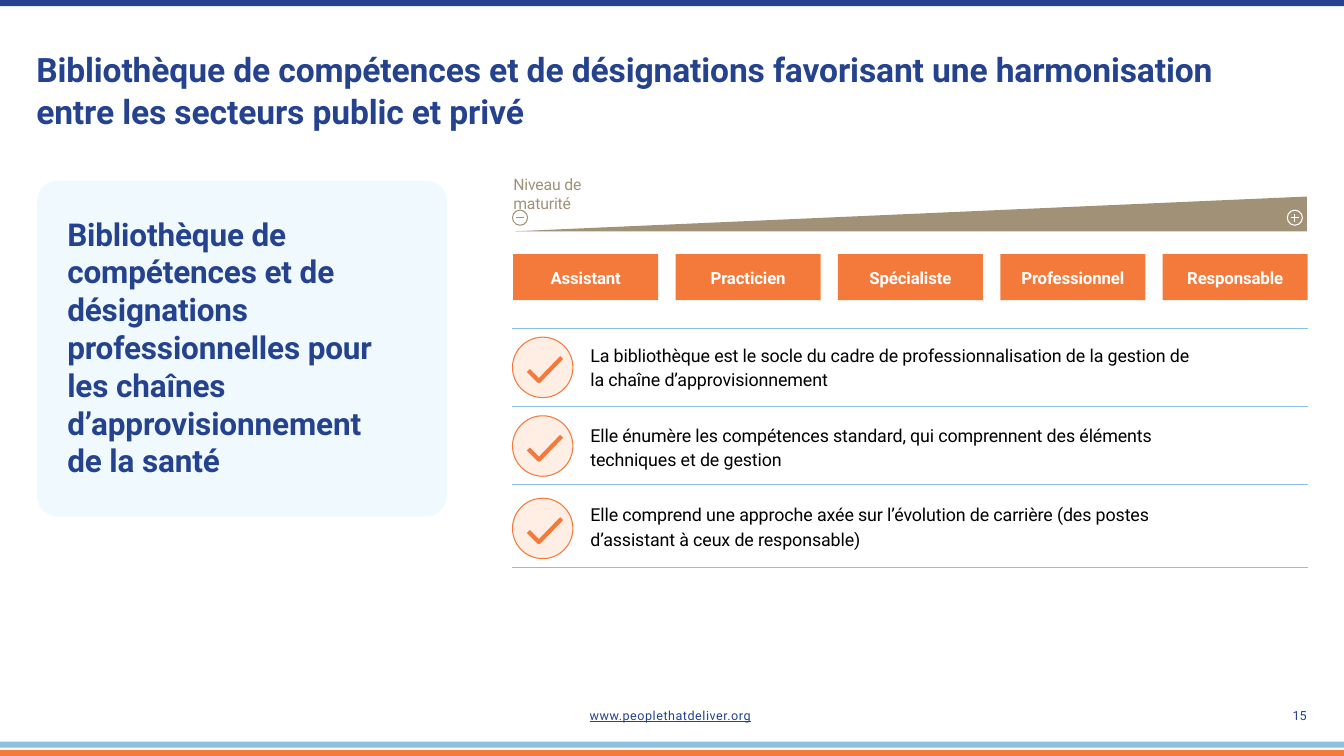
from lxml.etree import SubElement
from pptx import Presentation
from pptx.dml.color import RGBColor
from pptx.enum.shapes import MSO_CONNECTOR as Connector, MSO_SHAPE as Shape
from pptx.enum.text import MSO_ANCHOR as Anchor, PP_ALIGN as Align
from pptx.oxml.ns import qn
from pptx.util import Inches, Pt

NAVY, ORANGE, SKY, TAUPE = "24428E", "F47A3B", "8EBFE4", "A09177"
PEACH, ICE, WHITE, BLACK = "FEEEE3", "EFF9FE", "FFFFFF", "000000"


def color(value):
    return RGBColor.from_string(value)


def style(shape, fill=None, line=None, weight=1):
    shape.shadow.inherit = False
    if fill:
        shape.fill.solid()
        shape.fill.fore_color.rgb = color(fill)
    else:
        shape.fill.background()
    if line:
        shape.line.color.rgb = color(line)
        shape.line.width = Pt(weight)
    else:
        shape.line.fill.background()
    return shape


def add_form(page, kind, left, top, width, height, **look):
    shape = page.shapes.add_shape(
        kind, Inches(left), Inches(top), Inches(width), Inches(height))
    return style(shape, **look)


def add_outline(page, points, close, **look):
    points = [(Inches(x), Inches(y)) for x, y in points]
    builder = page.shapes.build_freeform(*points[0])
    builder.add_line_segments(points[1:], close=close)
    return style(builder.convert_to_shape(), **look)


def add_line(page, x1, y1, x2, y2, stroke):
    line = page.shapes.add_connector(
        Connector.STRAIGHT, Inches(x1), Inches(y1), Inches(x2), Inches(y2))
    line.line.color.rgb = color(stroke)
    line.line.width = Pt(1)
    SubElement(line._element.spPr, qn("a:effectLst"))


def write(shape, text, size, ink, bold=False, underline=False, tracking=-0.15,
          spacing=None, align=Align.LEFT, anchor=Anchor.TOP):
    """Fill a shape with one paragraph; a vertical tab marks a line break."""
    frame = shape.text_frame
    frame.word_wrap = True
    frame.vertical_anchor = anchor
    frame.margin_left = frame.margin_right = frame.margin_bottom = 0
    frame.margin_top = Inches(0.01)
    para = frame.paragraphs[0]
    para.text = text
    para.alignment = align
    para.space_before = Pt(0)
    if spacing:
        para.line_spacing = spacing
    for span in para.runs:
        font = span.font
        font.name, font.size, font.bold = "Roboto", Pt(size), bold
        font.underline = underline
        font.color.rgb = color(ink)
        span._r.get_or_add_rPr().set("spc", str(round(tracking * 100)))


def add_text(page, left, top, width, height, text, size, ink, **look):
    box = page.shapes.add_textbox(
        Inches(left), Inches(top), Inches(width), Inches(height))
    write(box, text, size, ink, **look)


def add_bars(page, width, height):
    for top, fill in ((0, NAVY), (height - 0.19, SKY), (height - 0.08, ORANGE)):
        add_form(page, Shape.RECTANGLE, 0, top, width, 0.08, fill=fill)


def add_title(page, left, top, width, height, text):
    title = page.shapes.title
    title.left, title.top = Inches(left), Inches(top)
    title.width, title.height = Inches(width), Inches(height)
    write(title, text, 32, NAVY, bold=True, spacing=Pt(40))


def add_panel(page, left, top, width, height, text):
    panel = add_form(page, Shape.ROUNDED_RECTANGLE, left, top, width, height, fill=ICE)
    panel.adjustments[0] = 0.06
    add_text(page, left + 0.4, top + 0.44, width - 0.9, height - 0.9,
             text, 30, NAVY, bold=True)


def add_maturity_scale(page, left, top, width, height):
    right, bottom = left + width, top + height
    add_outline(page, [(right, top), (left, bottom), (right, bottom)], True, fill=TAUPE)
    # Minus and plus signs at the two ends
    middle = top + 0.28
    for center, ink in ((left + 0.07, TAUPE), (right - 0.16, WHITE)):
        add_form(page, Shape.OVAL, center - 0.1, middle - 0.1, 0.2, 0.2, line=ink)
        add_line(page, center - 0.05, middle, center + 0.05, middle, ink)
    add_line(page, center, middle - 0.05, center, middle + 0.05, WHITE)
    add_text(page, left - 0.02, top - 0.3, 1.72, 0.5, "Niveau de\vmaturité", 15, TAUPE)


def add_levels(page, left, top, width, height, names):
    gap = 0.23
    cell = (width - gap * (len(names) - 1)) / len(names)
    for index, name in enumerate(names):
        level = add_form(page, Shape.RECTANGLE, left + index * (cell + gap), top,
                         cell, height, fill=ORANGE)
        write(level, name, 16, WHITE, bold=True, tracking=-0.1,
              align=Align.CENTER, anchor=Anchor.MIDDLE)


def add_check(page, left, top):
    add_form(page, Shape.OVAL, left, top, 0.8, 0.8, fill=PEACH, line=ORANGE)
    points = [(0.21, 0.44), (0.35, 0.58), (0.65, 0.27)]
    add_outline(page, [(left + x, top + y) for x, y in points], False,
                line=ORANGE, weight=4)


def add_check_list(page, left, width, bottom, rows):
    for rule_top, check_top, text_top, text in rows:
        add_line(page, left, rule_top, left + width, rule_top, SKY)
        add_check(page, left + 0.01, check_top)
        add_text(page, left + 1.04, text_top, 8.5, 0.67, text, 17, BLACK, spacing=1.13)
    add_line(page, left, bottom, left + width, bottom, SKY)


def add_footer(page, top):
    add_text(page, 7.8, top, 2.3, 0.22, "www.peoplethatdeliver.org", 12, NAVY,
             underline=True, tracking=0.5)
    add_text(page, 17.1, top, 0.25, 0.22, "15", 12, NAVY, tracking=0)


def main():
    deck = Presentation()
    deck.slide_width, deck.slide_height = Inches(17.78), Inches(10)
    page = deck.slides.add_slide(deck.slide_layouts[5])

    add_bars(page, 17.78, 10)
    add_title(page, 0.48, 0.62, 16.2, 1.12,
              "Bibliothèque de compétences et de désignations favorisant une "
              "harmonisation\ventre les secteurs public et privé")
    add_panel(page, 0.49, 2.39, 5.42, 4.44,
              "Bibliothèque de\vcompétences et de\vdésignations\v"
              "professionnelles pour\vles chaînes\v"
              "d’approvisionnement\vde la santé")
    add_maturity_scale(page, 6.81, 2.6, 10.48, 0.46)
    add_levels(page, 6.79, 3.36, 10.51, 0.61,
               ["Assistant", "Practicien", "Spécialiste", "Professionnel", "Responsable"])
    add_check_list(page, 6.77, 10.53, 7.51, [
        (4.34, 4.46, 4.51, "La bibliothèque est le socle du cadre de professionnalisation "
                           "de la gestion de\vla chaîne d’approvisionnement"),
        (5.38, 5.5, 5.57, "Elle énumère les compétences standard, qui comprennent "
                          "des éléments\vtechniques et de gestion"),
        (6.41, 6.59, 6.62, "Elle comprend une approche axée sur l’évolution de carrière "
                           "(des postes\vd’assistant à ceux de responsable)"),
    ])
    add_footer(page, 9.35)
    deck.save("out.pptx")


if __name__ == "__main__":
    main()
